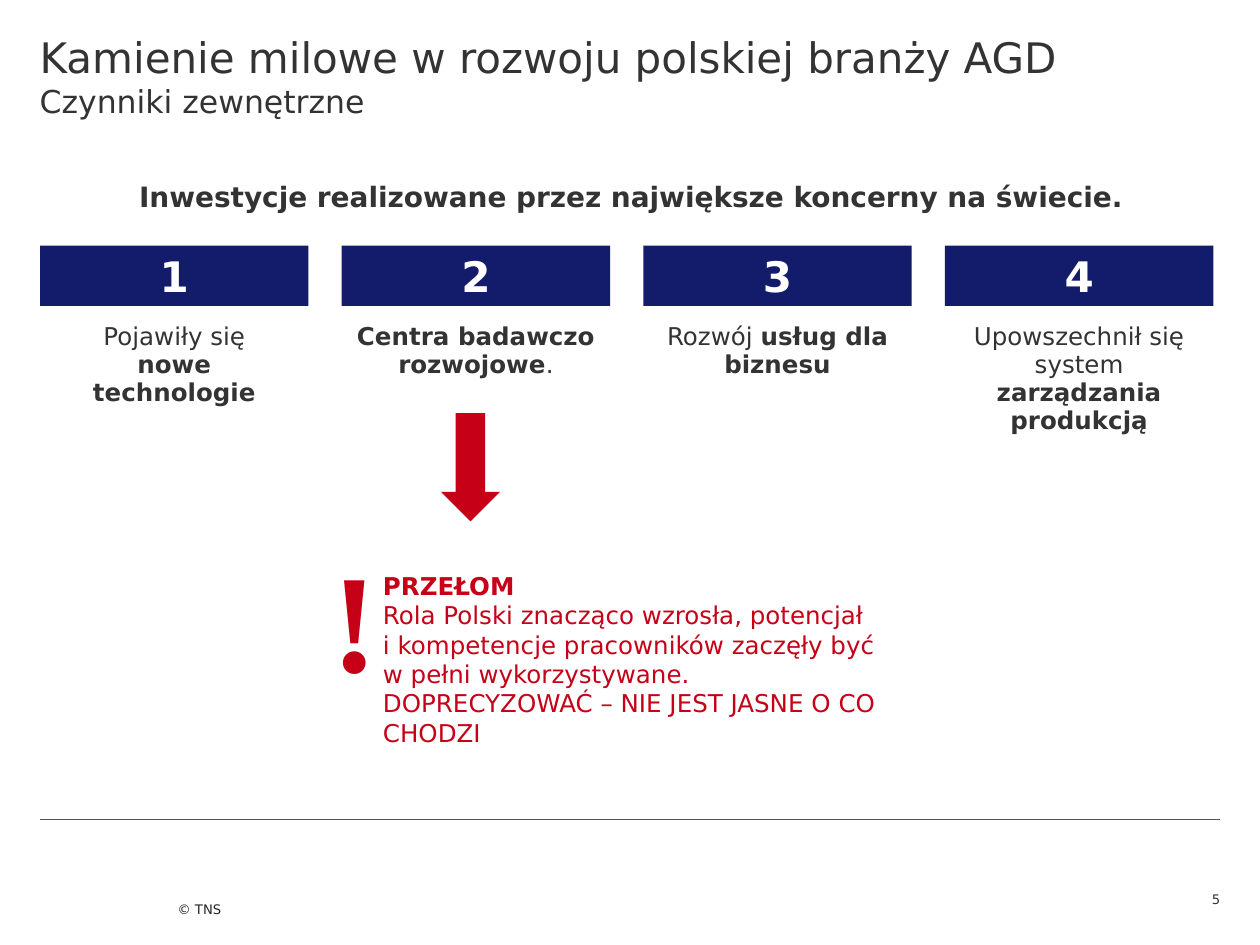
from pptx import Presentation
from pptx.dml.color import RGBColor
from pptx.enum import shapes, text
from pptx.oxml import ns, xmlchemy
from pptx.util import Cm, Pt

# Content: each paragraph is a list of (text, bold) runs
TITLE = [("Kamienie milowe w rozwoju polskiej branży AGD", 24), ("Czynniki zewnętrzne", 18)]
HEADLINE = [("Inwestycje realizowane przez największe koncerny na świecie.", True)]
FACTORS = [  # text width in cm, runs
    (4.98, [("Pojawiły się ", False), ("nowe technologie", True)]),
    (5.77, [("Centra badawczo rozwojowe", True), (".", False)]),
    (5.23, [("Rozwój ", False), ("usług dla biznesu", True)]),
    (5.49, [("Upowszechnił się system ", False), ("zarządzania produkcją", True)]),
]
BREAKTHROUGH = [
    [("PRZEŁOM", True)],
    [("Rola Polski znacząco wzrosła, potencjał i kompetencje pracowników zaczęły być "
      "w pełni wykorzystywane. DOPRECYZOWAĆ – NIE JEST JASNE O CO CHODZI", False)],
]

FONT = "DejaVu Sans"
GREY = RGBColor(0x33, 0x33, 0x33)
FOOTER_GREY = RGBColor(0x23, 0x23, 0x23)
RULE_GREY = RGBColor(0x52, 0x52, 0x52)
NAVY = RGBColor(0x13, 0x1C, 0x6B)
RED = RGBColor(0xC5, 0x00, 0x17)
WHITE = RGBColor(0xFF, 0xFF, 0xFF)

LEFT, RIGHT = 0.8, 24.6
BAR_WIDTH, BAR_PITCH = 5.41, 6.08


def add_span(para, words, size, color, bold=False, font=FONT):
    span = para.add_run()
    span.text = words
    span.font.name = font
    span.font.size = Pt(size)
    span.font.bold = bold
    span.font.color.rgb = color


def add_text(page, place, paras, size, color, align=text.PP_ALIGN.LEFT, spacing=None,
             margins=None, anchor=text.MSO_ANCHOR.TOP, font=FONT):
    frame = page.shapes.add_textbox(*map(Cm, place)).text_frame
    frame.word_wrap = True
    frame.vertical_anchor = anchor
    if margins:
        (frame.margin_left, frame.margin_top,
         frame.margin_right, frame.margin_bottom) = map(Cm, margins)
    for index, spans in enumerate(paras):
        para = frame.add_paragraph() if index else frame.paragraphs[0]
        para.alignment = align
        para.line_spacing = spacing
        for words, bold in spans:
            add_span(para, words, size, color, bold, font)


def add_block(page, kind, place, color):
    block = page.shapes.add_shape(kind, *map(Cm, place))
    block.shadow.inherit = False
    block.fill.solid()
    block.fill.fore_color.rgb = color
    block.line.fill.background()
    return block


def add_title(page):
    title = page.shapes.title
    title.left, title.top, title.width, title.height = map(Cm, (LEFT, 0, RIGHT - LEFT, 2.87))
    frame = title.text_frame
    frame.auto_size = text.MSO_AUTO_SIZE.NONE
    frame.vertical_anchor = text.MSO_ANCHOR.TOP
    frame.margin_left = frame.margin_right = frame.margin_bottom = 0
    frame.margin_top = Cm(0.64)
    para = frame.paragraphs[0]
    para.alignment = text.PP_ALIGN.LEFT
    for index, (words, size) in enumerate(TITLE):
        if index:
            para.add_line_break()
        add_span(para, words, size, GREY)


def add_factors(page):
    for index, (width, spans) in enumerate(FACTORS):
        left = LEFT + 0.01 + index * BAR_PITCH
        bar = add_block(page, shapes.MSO_SHAPE.RECTANGLE, (left, 4.95, BAR_WIDTH, 1.22), NAVY)
        bar.text_frame.vertical_anchor = text.MSO_ANCHOR.MIDDLE
        para = bar.text_frame.paragraphs[0]
        para.alignment = text.PP_ALIGN.CENTER
        add_span(para, str(index + 1), 24, WHITE, True)
        text_left = left + (BAR_WIDTH - width) / 2
        add_text(page, (text_left, 6.38, width, 2.54), [spans], 14, GREY,
                 text.PP_ALIGN.CENTER, Pt(16))


def add_footer(page):
    rule = page.shapes.add_connector(shapes.MSO_CONNECTOR.STRAIGHT,
                                     Cm(LEFT), Cm(16.52), Cm(RIGHT), Cm(16.52))
    rule.line.color.rgb = RULE_GREY
    rule.line.width = Pt(0.75)
    rule._element.spPr.append(xmlchemy.OxmlElement("a:effectLst"))
    bottom = text.MSO_ANCHOR.BOTTOM
    add_text(page, (3.58, 17.58, 7.06, 1.47), [[("© TNS", False)]], 7.5, FOOTER_GREY,
             margins=(0, 0, 0, 0.79), anchor=bottom)
    add_text(page, (23.2, 17.58, 1.4, 0.71), [[("5", False)]], 7.5, GREY,
             text.PP_ALIGN.RIGHT, margins=(0, 0, 0, 0), anchor=bottom)


def main():
    deck = Presentation()
    deck.slide_width, deck.slide_height = Cm(25.4), Cm(19.05)
    page = deck.slides.add_slide(deck.slide_layouts[5])

    # Title, headline and the four numbered factors
    add_title(page)
    add_text(page, (0.81, 3.61, 23.83, 0.84), [HEADLINE], 16, GREY,
             text.PP_ALIGN.CENTER, Pt(16))
    add_factors(page)

    # Breakthrough that follows from the second factor
    add_block(page, shapes.MSO_SHAPE.DOWN_ARROW, (8.89, 8.33, 1.19, 2.18), RED)
    add_text(page, (7.47, 11.38, 10.44, 3.84), BREAKTHROUGH, 14, RED)
    add_text(page, (6.68, 10.74, 0.91, 2.54), [[("!", True)]], 80, RED,
             margins=(0, 0, 0, 0), font="Times New Roman")

    add_footer(page)
    deck.save("out.pptx")


if __name__ == "__main__":
    main()
